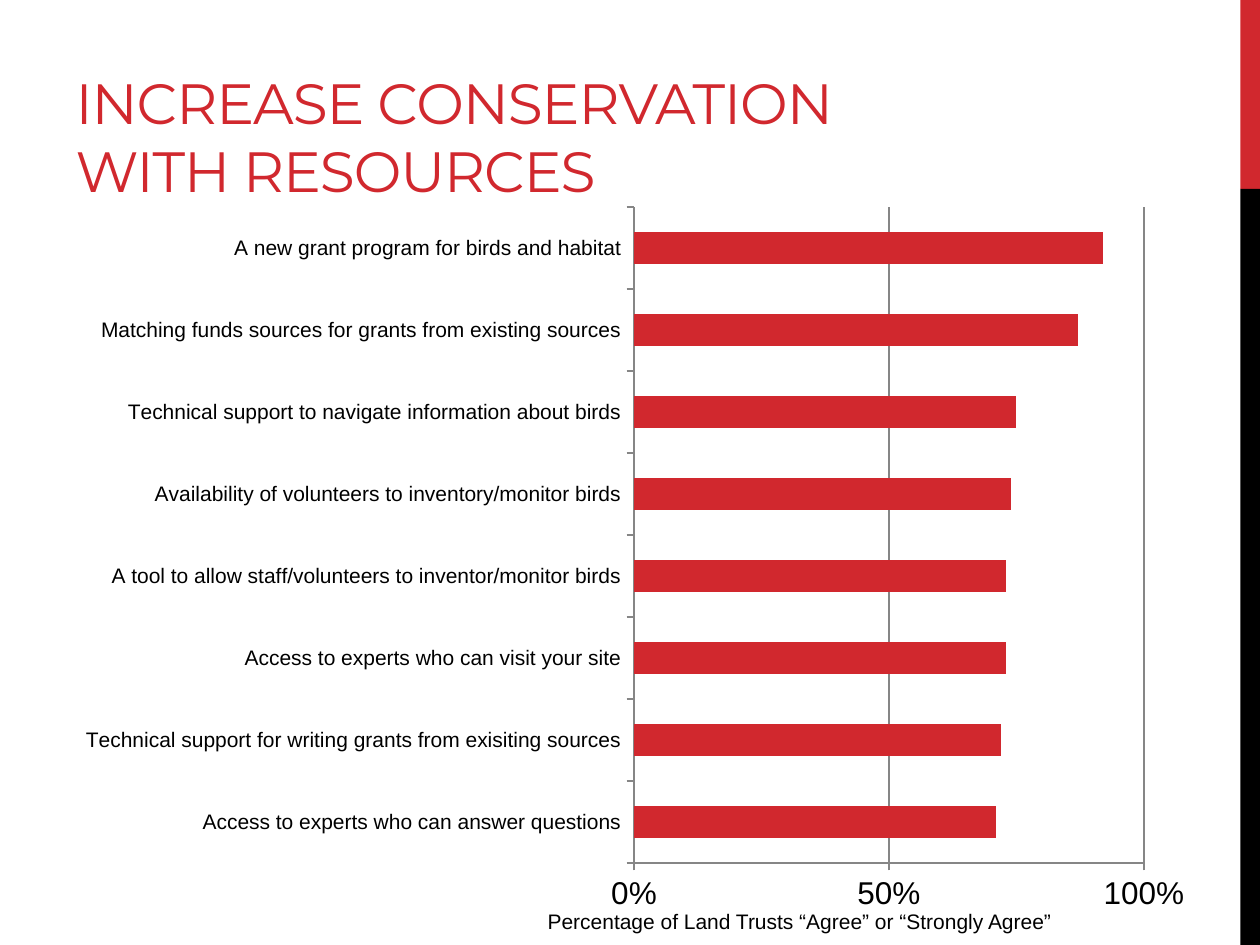
from dataclasses import dataclass

from lxml.etree import SubElement
from pptx import Presentation
from pptx.chart.data import CategoryChartData
from pptx.dml.color import RGBColor
from pptx.enum.chart import XL_CHART_TYPE as ChartType, XL_TICK_MARK as Tick
from pptx.enum.shapes import MSO_SHAPE as Shape
from pptx.enum.text import MSO_ANCHOR as Anchor, MSO_AUTO_SIZE as AutoSize, PP_ALIGN as Align
from pptx.oxml.ns import qn
from pptx.util import Pt


@dataclass(frozen=True)
class Theme:
    red: RGBColor = RGBColor(0xD1, 0x28, 0x2E)
    black: RGBColor = RGBColor(0, 0, 0)
    gray: RGBColor = RGBColor(0x86, 0x86, 0x86)
    title_font: str = "Montserrat"
    body_font: str = "Arial"
    title_size: float = 32.4
    axis_size: float = 18
    label_size: float = 12
    line_width: float = 1


@dataclass(frozen=True)
class Box:
    left: float
    top: float
    width: float
    height: float

    def lengths(self) -> tuple:
        return Pt(self.left), Pt(self.top), Pt(self.width), Pt(self.height)


@dataclass(frozen=True)
class Band:
    box: Box
    color: RGBColor


@dataclass(frozen=True)
class Answer:
    label: str
    share: float


THEME = Theme()
SLIDE = Box(0, 0, 720, 540)
TITLE = Box(36, 12, 456, 108)
CHART = Box(36, 110, 654, 419)
PLOT = Box(362.3, 118.3, 291.4, 374.9)
CAPTION = Box(292, 515.5, 330, 21.6)
BANDS = [
    Band(Box(708.75, 0, 11.25, 108), THEME.red),
    Band(Box(708.75, 108, 11.25, 432), THEME.black),
]
ANSWERS = [
    Answer("Access to experts who can answer questions", 0.71),
    Answer("Technical support for writing grants from exisiting sources", 0.72),
    Answer("Access to experts who can visit your site", 0.73),
    Answer("A tool to allow staff/volunteers to inventor/monitor birds", 0.73),
    Answer("Availability of volunteers to inventory/monitor birds", 0.74),
    Answer("Technical support to navigate information about birds", 0.75),
    Answer("Matching funds sources for grants from existing sources", 0.87),
    Answer("A new grant program for birds and habitat", 0.92),
]


def place(sp, box: Box) -> None:
    sp.left, sp.top, sp.width, sp.height = box.lengths()


def set_font(font, *, name: str, size: float, color: RGBColor) -> None:
    font.name = name
    font.size = Pt(size)
    font.bold = False
    font.color.rgb = color


def write(sp, text: str, *, font: str, size: float, color: RGBColor,
          align=Align.LEFT, anchor=Anchor.TOP, fit=AutoSize.NONE,
          spacing: float = 0) -> None:
    tf = sp.text_frame
    tf.word_wrap = True
    tf.auto_size = fit
    tf.vertical_anchor = anchor
    p = tf.paragraphs[0]
    p.alignment = align
    r = p.add_run()
    r.text = text
    set_font(r.font, name=font, size=size, color=color)
    if spacing:
        r.font._element.set("spc", str(round(spacing * 100)))


def draw_band(s, band: Band) -> None:
    sp = s.shapes.add_shape(Shape.RECTANGLE, *band.box.lengths())
    sp.shadow.inherit = False
    sp.fill.solid()
    sp.fill.fore_color.rgb = band.color
    sp.line.fill.background()


def set_plot_area(chart, frame: Box, plot: Box) -> None:
    area = chart._chartSpace.chart.plotArea
    layout = area.find(qn("c:layout"))
    if layout is None:
        layout = SubElement(area, qn("c:layout"))
        area.insert(0, layout)
    manual = SubElement(layout, qn("c:manualLayout"))
    settings = {
        "layoutTarget": "inner",
        "xMode": "edge",
        "yMode": "edge",
        "x": (plot.left - frame.left) / frame.width,
        "y": (plot.top - frame.top) / frame.height,
        "w": plot.width / frame.width,
        "h": plot.height / frame.height,
    }
    for tag, value in settings.items():
        SubElement(manual, qn(f"c:{tag}")).set("val", str(value))


def style_line(line) -> None:
    line.color.rgb = THEME.gray
    line.width = Pt(THEME.line_width)


def draw_chart(s, answers: list[Answer]) -> None:
    data = CategoryChartData(number_format="0%")
    data.categories = [a.label for a in answers]
    data.add_series("Series 1", [a.share for a in answers])
    chart = s.shapes.add_chart(ChartType.BAR_CLUSTERED, *CHART.lengths(), data).chart
    chart.has_legend = False
    chart.has_title = False
    set_font(chart.font, name=THEME.body_font, size=THEME.axis_size, color=THEME.black)
    set_plot_area(chart, CHART, PLOT)

    plot = chart.plots[0]
    plot.gap_width = 150
    plot.vary_by_categories = False
    fill = plot.series[0].format.fill
    fill.solid()
    fill.fore_color.rgb = THEME.red

    cat, val = chart.category_axis, chart.value_axis
    for axis, size in ((cat, THEME.label_size), (val, THEME.axis_size)):
        axis.major_tick_mark = Tick.OUTSIDE
        axis.minor_tick_mark = Tick.NONE
        style_line(axis.format.line)
        set_font(axis.tick_labels.font, name=THEME.body_font, size=size, color=THEME.black)
    cat.has_major_gridlines = False
    val.minimum_scale, val.maximum_scale, val.major_unit = 0, 1, 0.5
    val.has_major_gridlines = True
    style_line(val.major_gridlines.format.line)
    val.tick_labels.number_format = "0%"
    val.tick_labels.number_format_is_linked = False


def main() -> None:
    prs = Presentation()
    prs.slide_width, prs.slide_height = Pt(SLIDE.width), Pt(SLIDE.height)
    s = prs.slides.add_slide(prs.slide_layouts[5])
    for band in BANDS:
        draw_band(s, band)
    place(s.shapes.title, TITLE)
    write(s.shapes.title, "INCREASE CONSERVATION WITH RESOURCES", font=THEME.title_font,
          size=THEME.title_size, color=THEME.red, anchor=Anchor.BOTTOM, spacing=-0.6)
    draw_chart(s, ANSWERS)
    caption = s.shapes.add_textbox(*CAPTION.lengths())
    write(caption, "Percentage of Land Trusts “Agree” or “Strongly Agree”",
          font=THEME.body_font, size=THEME.label_size, color=THEME.black,
          align=Align.CENTER, fit=AutoSize.SHAPE_TO_FIT_TEXT)
    prs.save("out.pptx")


if __name__ == "__main__":
    main()
